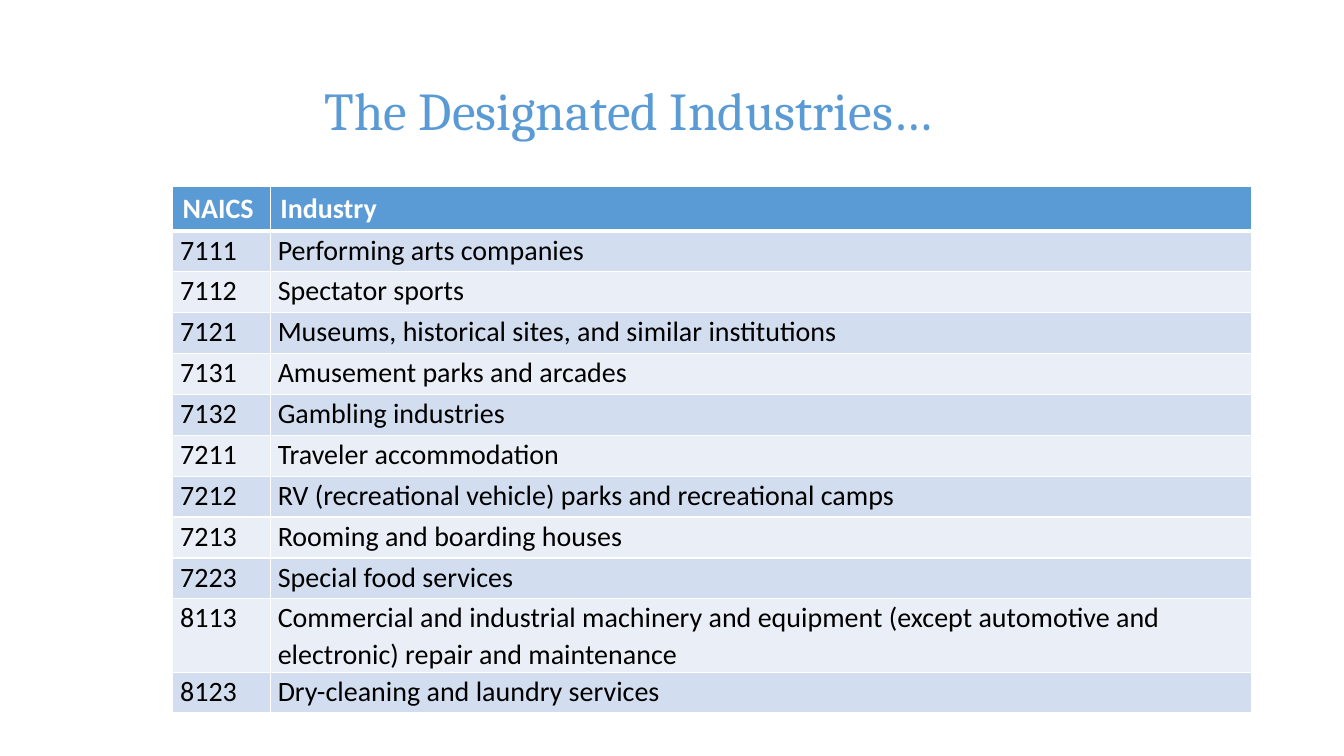
from dataclasses import dataclass

from lxml.etree import SubElement
from pptx import Presentation
from pptx.dml.color import RGBColor as Color
from pptx.enum.text import MSO_ANCHOR as Anchor
from pptx.oxml.ns import qn
from pptx.util import Cm, Pt


@dataclass(frozen=True)
class Theme:
    accent: str = "5B9BD5"
    odd_band: str = "D2DEEF"
    even_band: str = "EAEFF7"
    border: str = "FFFFFF"
    header_text: str = "FFFFFF"
    body_text: str = "000000"
    title_font: str = "Cambria"
    table_font: str = "Calibri"
    title_size: int = 38
    table_size: int = 20


theme = Theme()

INDUSTRIES = [
    ("NAICS", "Industry"),
    ("7111", "Performing arts companies"),
    ("7112", "Spectator sports"),
    ("7121", "Museums, historical sites, and similar institutions"),
    ("7131", "Amusement parks and arcades"),
    ("7132", "Gambling industries"),
    ("7211", "Traveler accommodation"),
    ("7212", "RV (recreational vehicle) parks and recreational camps"),
    ("7213", "Rooming and boarding houses"),
    ("7223", "Special food services"),
    ("8113", "Commercial and industrial machinery and equipment "
             "(except automotive and electronic) repair and maintenance"),
    ("8123", "Dry-cleaning and laundry services"),
]
COLUMN_WIDTHS = (Cm(2.46), Cm(24.74))
ROW_HEIGHT = Cm(1.03)


def add_run(paragraph, text, font_name, size, color, bold=False):
    run = paragraph.add_run()
    run.text = text
    run.font.name = font_name
    run.font.size = Pt(size)
    run.font.bold = bold
    run.font.color.rgb = Color.from_string(color)


def add_border(cell, side, width):
    line = SubElement(cell._tc.get_or_add_tcPr(), qn(f"a:ln{side}"), w=str(Pt(width)))
    fill = SubElement(line, qn("a:solidFill"))
    SubElement(fill, qn("a:srgbClr"), val=theme.border)


presentation = Presentation()
presentation.slide_width = Cm(33.87)
presentation.slide_height = Cm(19.05)
slide = presentation.slides.add_slide(presentation.slide_layouts[6])

table_shape = slide.shapes.add_table(
    len(INDUSTRIES), len(COLUMN_WIDTHS), Cm(4.35), Cm(4.7),
    sum(COLUMN_WIDTHS), ROW_HEIGHT * len(INDUSTRIES))
table = table_shape.table
for column, width in zip(table.columns, COLUMN_WIDTHS):
    column.width = width

for row_index, texts in enumerate(INDUSTRIES):
    is_header = row_index == 0
    table.rows[row_index].height = ROW_HEIGHT
    if is_header:
        fill_color, text_color = theme.accent, theme.header_text
    else:
        fill_color = theme.odd_band if row_index % 2 else theme.even_band
        text_color = theme.body_text
    for column_index, text in enumerate(texts):
        cell = table.cell(row_index, column_index)
        for side in "LRTB":
            heavy = (is_header and side == "B") or (row_index == 1 and side == "T")
            add_border(cell, side, 3 if heavy else 1)
        cell.fill.solid()
        cell.fill.fore_color.rgb = Color.from_string(fill_color)
        paragraph = cell.text_frame.paragraphs[0]
        if not is_header:
            cell.margin_left = cell.margin_right = Cm(0.19)
            cell.margin_top = cell.margin_bottom = Cm(0)
            paragraph.line_spacing = 1.07
        add_run(paragraph, text, theme.table_font, theme.table_size, text_color, is_header)

title = slide.shapes.add_textbox(Cm(6.45), Cm(1.02), Cm(25.1), Cm(3.68))
title_frame = title.text_frame
title_frame.word_wrap = True
title_frame.vertical_anchor = Anchor.MIDDLE
title_frame.margin_left = Cm(1.73)
title_paragraph = title_frame.paragraphs[0]
title_paragraph.line_spacing = 0.9
add_run(title_paragraph, "The Designated Industries…",
        theme.title_font, theme.title_size, theme.accent)

presentation.save("out.pptx")
